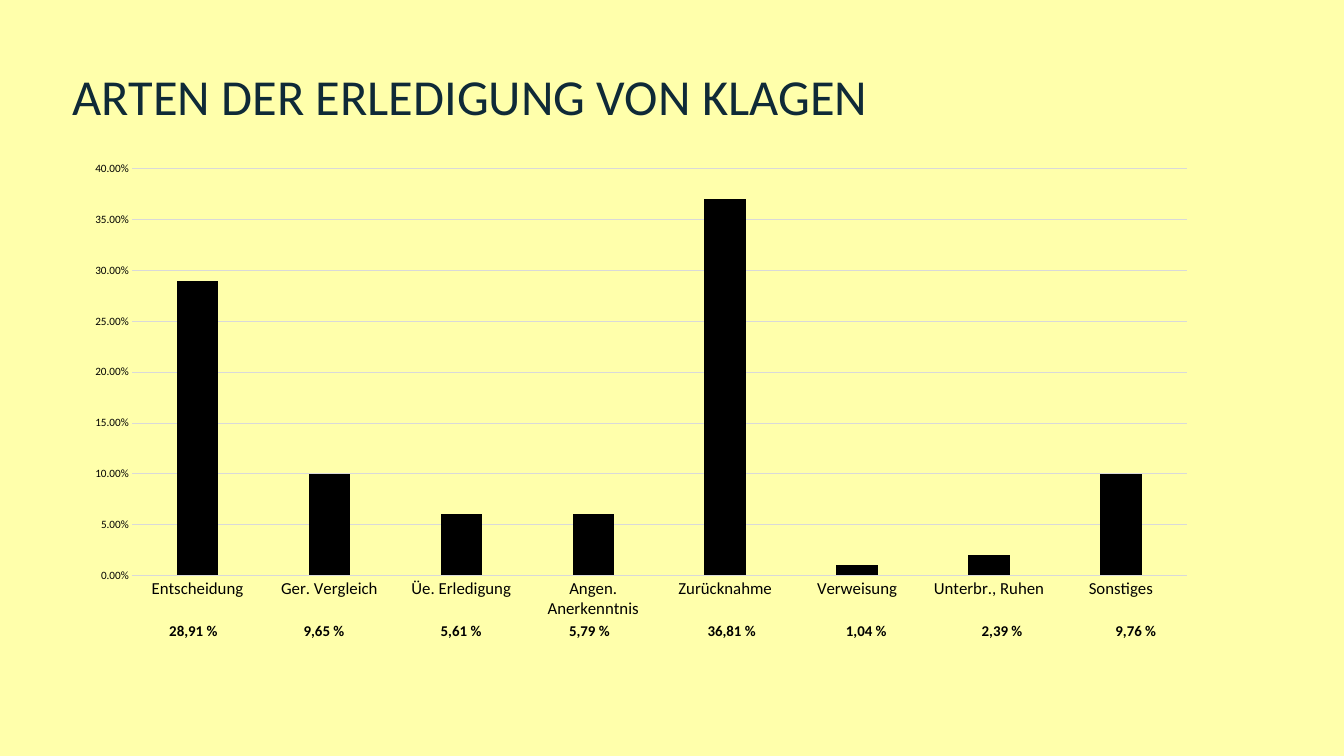
import pptx
import pptx.chart.data
import pptx.dml.color
import pptx.enum.chart
import pptx.enum.text
import pptx.util

PX = 9144  # EMU per px, 100 px to the inch
FONT = "Calibri"
BACKGROUND = pptx.dml.color.RGBColor(0xFF, 0xFF, 0xAB)
NAVY = pptx.dml.color.RGBColor(0x0F, 0x2A, 0x37)
BLACK = pptx.dml.color.RGBColor(0, 0, 0)
GRID = pptx.dml.color.RGBColor(0xD9, 0xD9, 0xD9)

# category, percentage, left and width of its label within the label row
OUTCOMES = [
    ("Entscheidung", 28.91, 134, 93),
    ("Ger. Vergleich", 9.65, 334, 86),
    ("Üe. Erledigung", 5.61, 538, 84),
    ("Angen. Anerkenntnis", 5.79, 729, 94),
    ("Zurücknahme", 36.81, 935, 99),
    ("Verweisung", 1.04, 1141, 87),
    ("Unterbr., Ruhen", 2.39, 1343, 87),
    ("Sonstiges", 9.76, 1542, 88),
]


def px(*lengths):
    return [pptx.util.Emu(length * PX) for length in lengths]


def format_font(font, size, color, bold=False):
    font.name = FONT
    font.size = pptx.util.Pt(size)
    font.color.rgb = color
    font.bold = bold


def place_title(slide, box):
    title = slide.shapes.title
    title.left, title.top, title.width, title.height = px(*box)
    frame = title.text_frame
    frame.text = "ARTEN DER ERLEDIGUNG VON KLAGEN"
    frame.word_wrap = True
    frame.auto_size = pptx.enum.text.MSO_AUTO_SIZE.NONE
    frame.vertical_anchor = pptx.enum.text.MSO_ANCHOR.TOP
    frame.margin_left = frame.margin_right = 0
    frame.margin_top = frame.margin_bottom = 0
    paragraph = frame.paragraphs[0]
    paragraph.alignment = pptx.enum.text.PP_ALIGN.LEFT
    paragraph.line_spacing = pptx.util.Pt(115.2)
    format_font(paragraph.font, 54, NAVY)


def place_chart(slide, box):
    data = pptx.chart.data.CategoryChartData(number_format="0.00%")
    data.categories = [outcome[0] for outcome in OUTCOMES]
    data.add_series("Series 1", [round(outcome[1] / 100, 2) for outcome in OUTCOMES])
    chart = slide.shapes.add_chart(
        pptx.enum.chart.XL_CHART_TYPE.COLUMN_CLUSTERED, *px(*box), data
    ).chart
    chart.has_legend = False
    chart.has_title = False
    format_font(chart.font, 10, BLACK)

    # Columns
    plot = chart.plots[0]
    plot.gap_width = 219
    plot.overlap = -27
    plot.vary_by_categories = False
    columns = plot.series[0]
    columns.invert_if_negative = False
    columns.format.fill.solid()
    columns.format.fill.fore_color.rgb = BLACK

    # Axes
    for axis, size in ((chart.category_axis, 18), (chart.value_axis, 12)):
        axis.major_tick_mark = pptx.enum.chart.XL_TICK_MARK.NONE
        axis.minor_tick_mark = pptx.enum.chart.XL_TICK_MARK.NONE
        format_font(axis.tick_labels.font, size, BLACK)
    values = chart.value_axis
    values.minimum_scale, values.maximum_scale, values.major_unit = 0, 0.4, 0.05
    values.tick_labels.number_format = "0.00%"
    values.tick_labels.number_format_is_linked = False
    values.format.line.fill.background()
    values.has_major_gridlines = True
    for line in (chart.category_axis.format.line, values.major_gridlines.format.line):
        line.color.rgb = GRID
        line.width = pptx.util.Pt(0.75)


def place_labels(slide, box):
    row_left, top, _, height = box
    for _, percentage, left, width in OUTCOMES:
        label = slide.shapes.add_textbox(*px(row_left + left, top, width, height))
        frame = label.text_frame
        frame.word_wrap = False
        frame.auto_size = pptx.enum.text.MSO_AUTO_SIZE.SHAPE_TO_FIT_TEXT
        frame.text = f"{percentage:.2f} %".replace(".", ",")
        paragraph = frame.paragraphs[0]
        paragraph.alignment = pptx.enum.text.PP_ALIGN.LEFT
        format_font(paragraph.font, 16, BLACK, bold=True)


def main():
    presentation = pptx.Presentation()
    presentation.slide_width, presentation.slide_height = px(2000, 1125)
    slide = presentation.slides.add_slide(presentation.slide_layouts[5])
    slide.background.fill.solid()
    slide.background.fill.fore_color.rgb = BACKGROUND
    place_title(slide, (108, 27, 1264, 161))
    place_chart(slide, (108, 227, 1692, 708))
    place_labels(slide, (108, 920, 1692, 37))
    presentation.save("out.pptx")


if __name__ == "__main__":
    main()
